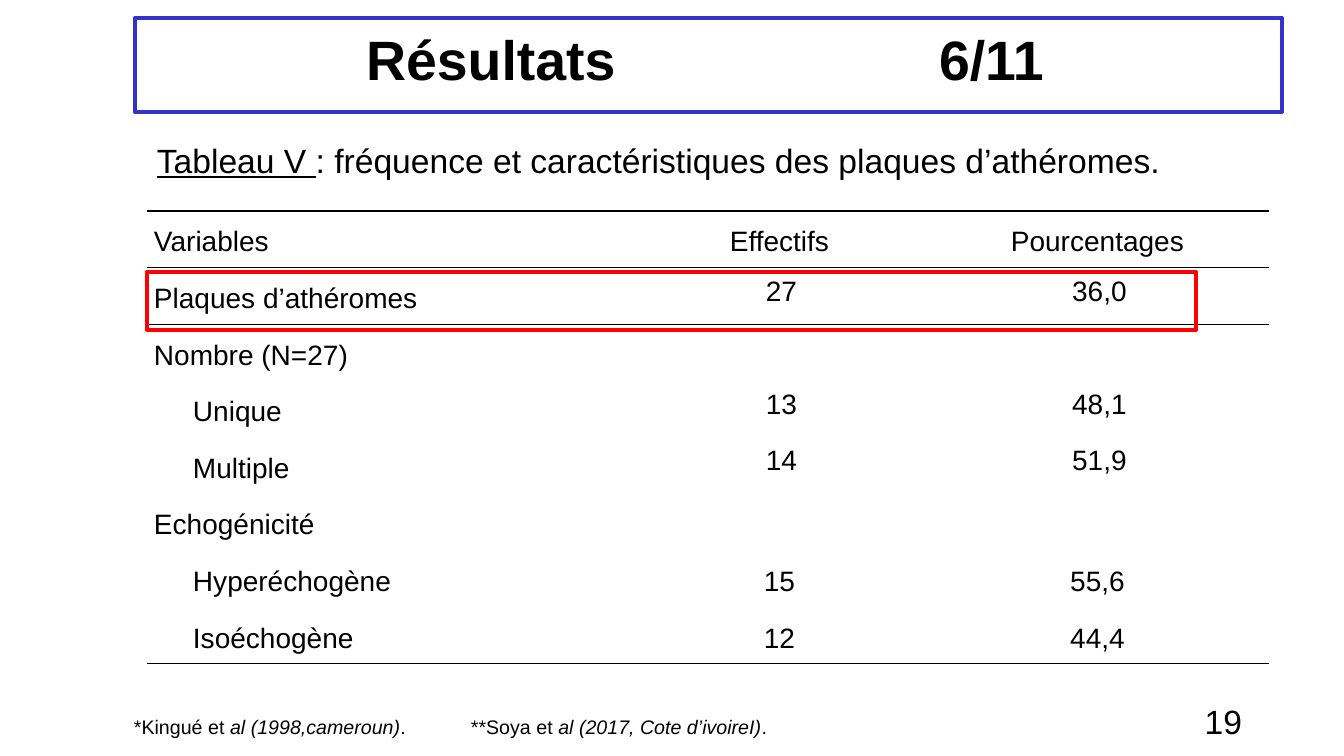
"""Build the results slide with the table of atheroma plaques."""
import dataclasses

import lxml.etree
import pptx
import pptx.dml.color
import pptx.enum.shapes
import pptx.enum.text
import pptx.oxml.ns
import pptx.util

EMU_PER_PX = 12192000 / 1344
NO_GRID_STYLE = "{2D5ABB26-0587-4C30-8999-92F81FD0307C}"
ALIGN = pptx.enum.text.PP_ALIGN
ANCHOR = pptx.enum.text.MSO_ANCHOR


@dataclasses.dataclass(frozen=True)
class Theme:
    font: str = "Arial"
    ink: str = "000000"
    frame: str = "3333CC"
    highlight: str = "FF0000"
    title: float = 39.6
    caption: int = 24
    cell: int = 20
    note: int = 14
    outline: int = 3


THEME = Theme()
COLUMN_WIDTHS = (486, 293, 343)
TABLE_HEIGHT = 453
CELL_INSET = 7
SUBITEM_INDENT = 39
NUMBER_INDENT = 4
ROWS = (
    ("Variables", "Effectifs", "Pourcentages"),
    ("Plaques d’athéromes", "27", "36,0"),
    ("Nombre (N=27)", "", ""),
    ("Unique", "13", "48,1"),
    ("Multiple", "14", "51,9"),
    ("Echogénicité", "", ""),
    ("Hyperéchogène", "15", "55,6"),
    ("Isoéchogène", "12", "44,4"),
)
SUBITEM_ROWS = (3, 4, 6, 7)
COMPACT_ROWS = (1, 3, 4)
RULED_ROWS = (0, 1, 7)


def px(length):
    """Turn pixels into EMU."""
    return pptx.util.Emu(round(length * EMU_PER_PX))


def color(value):
    """Make a colour from its hexadecimal form."""
    return pptx.dml.color.RGBColor.from_string(value)


def write(para, size, *spans, align=ALIGN.LEFT, spacing=None):
    """Fill a paragraph with spans, each a text and its font switches."""
    para.alignment = align
    para.line_spacing = spacing
    for text, switches in spans:
        span = para.add_run()
        span.text = text
        span.font.name = THEME.font
        span.font.size = pptx.util.Pt(size)
        span.font.color.rgb = color(THEME.ink)
        for name in switches:
            setattr(span.font, name, True)


def add_tab_stop(para, position):
    """Give a paragraph one left tab stop."""
    properties = para._p.get_or_add_pPr()
    stops = lxml.etree.SubElement(properties, pptx.oxml.ns.qn("a:tabLst"))
    lxml.etree.SubElement(stops, pptx.oxml.ns.qn("a:tab"), pos=str(px(position)), algn="l")


def add_text(page, left, top, width, height, anchor=ANCHOR.TOP):
    """Add a wrapping text box and return its first paragraph."""
    frame = page.shapes.add_textbox(px(left), px(top), px(width), px(height)).text_frame
    frame.word_wrap = True
    frame.vertical_anchor = anchor
    return frame.paragraphs[0]


def add_frame(page, left, top, width, height, line):
    """Add an unfilled rectangle with a coloured outline."""
    box = page.shapes.add_shape(
        pptx.enum.shapes.MSO_SHAPE.RECTANGLE, px(left), px(top), px(width), px(height))
    box.shadow.inherit = False
    box.fill.background()
    box.line.color.rgb = color(line)
    box.line.width = pptx.util.Pt(THEME.outline)
    return box


def add_title(page):
    """Add the framed title with its part number."""
    frame = add_frame(page, 135, 18, 1147, 94, THEME.frame).text_frame
    frame.word_wrap = True
    frame.vertical_anchor = ANCHOR.MIDDLE
    frame.margin_left, frame.margin_top, frame.margin_bottom = px(231), 0, px(4)
    para = frame.paragraphs[0]
    write(para, THEME.title, ("Résultats\t6/11", ["bold"]), spacing=0.9)
    add_tab_stop(para, 573)


def rule_cell(cell, *sides):
    """Draw thin rules on the given sides of a cell."""
    properties = cell._tc.get_or_add_tcPr()
    for index, side in enumerate(sides):
        line = lxml.etree.Element(pptx.oxml.ns.qn(f"a:ln{side}"), w=str(pptx.util.Pt(1)))
        fill = lxml.etree.SubElement(line, pptx.oxml.ns.qn("a:solidFill"))
        lxml.etree.SubElement(fill, pptx.oxml.ns.qn("a:srgbClr"), val=THEME.ink)
        properties.insert(index, line)


def fill_cell(cell, row, column, text):
    """Set the layout, rules and wording of one cell."""
    cell.fill.background()
    cell.margin_left = cell.margin_right = px(CELL_INSET)
    cell.margin_top = cell.margin_bottom = 0
    compact = column > 0 and row in COMPACT_ROWS
    cell.vertical_anchor = ANCHOR.MIDDLE if compact else ANCHOR.TOP
    para = cell.text_frame.paragraphs[0]
    if text:
        write(para, THEME.cell, (text, []),
              align=ALIGN.CENTER if column else ALIGN.JUSTIFY,
              spacing=pptx.util.Pt(16) if compact else 1.5)
    if compact:
        para._p.get_or_add_pPr().set("marL", str(px(NUMBER_INDENT)))
    elif column == 0 and row in SUBITEM_ROWS:
        para._p.get_or_add_pPr().set("marL", str(px(SUBITEM_INDENT)))
    sides = (["T"] if row == 0 else []) + (["B"] if row in RULED_ROWS else [])
    rule_cell(cell, *sides)


def add_plaque_table(page):
    """Add the table of plaque counts and percentages."""
    table = page.shapes.add_table(
        len(ROWS), len(COLUMN_WIDTHS), px(147), px(211),
        px(sum(COLUMN_WIDTHS)), px(TABLE_HEIGHT)).table
    table.horz_banding = table.first_row = False
    table._tbl.tblPr[0].text = NO_GRID_STYLE
    for column, width in zip(table.columns, COLUMN_WIDTHS):
        column.width = px(width)
    for row, texts in enumerate(ROWS):
        table.rows[row].height = px(TABLE_HEIGHT / len(ROWS))
        for column, text in enumerate(texts):
            fill_cell(table.cell(row, column), row, column, text)


def add_footnote(page):
    """Add the two cited studies."""
    para = add_text(page, 124, 715, 1060, 28)
    write(para, THEME.note,
          ("*Kingué et ", []), ("al (1998,cameroun)", ["italic"]),
          (".\t**Soya et ", []), ("al (2017, Cote d’ivoireI)", ["italic"]), (".", []),
          spacing=pptx.util.Pt(13))
    para.space_before = pptx.util.Pt(10)
    para.space_after = pptx.util.Pt(6)
    add_tab_stop(para, 337)


def main():
    """Build and save the deck."""
    deck = pptx.Presentation()
    deck.slide_width, deck.slide_height = px(1344), px(756)
    page = deck.slides.add_slide(deck.slide_layouts[6])
    add_title(page)
    add_plaque_table(page)
    write(add_text(page, 147, 135, 1122, 82), THEME.caption,
          ("Tableau V ", ["underline"]),
          (": fréquence et caractéristiques des plaques d’athéromes.", []))
    write(add_text(page, 950, 701, 302, 40, ANCHOR.MIDDLE), THEME.caption,
          ("19", []), align=ALIGN.RIGHT)
    add_footnote(page)
    add_frame(page, 147, 272, 1049, 58, THEME.highlight)
    deck.save("out.pptx")


if __name__ == "__main__":
    main()
